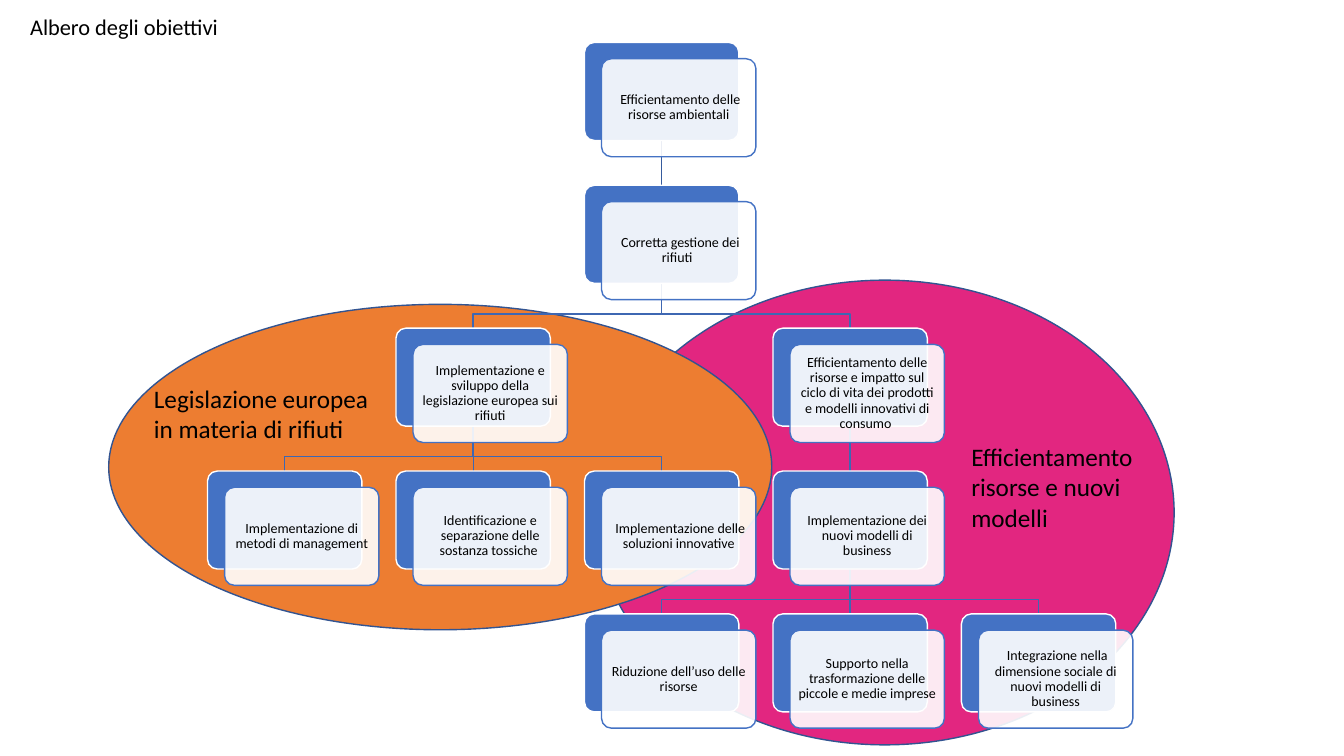
import pptx
import pptx.util
import pptx.dml.color
import pptx.enum.shapes
import pptx.enum.text
import pptx.oxml.ns
import lxml.etree
from dataclasses import dataclass

Cm, Pt = pptx.util.Cm, pptx.util.Pt
qn = pptx.oxml.ns.qn
SHAPE = pptx.enum.shapes.MSO_SHAPE
ALIGN = pptx.enum.text.PP_ALIGN
ANCHOR = pptx.enum.text.MSO_ANCHOR

# Content: key -> (column, row, parent, text)
GOALS = {
    "resources": (2, 0, None, " Efficientamento delle risorse ambientali"),
    "waste": (2, 1, "resources", " Corretta gestione dei rifiuti "),
    "law": (1, 2, "waste",
            "Implementazione e sviluppo della legislazione europea sui rifiuti"),
    "management": (0, 3, "law", "Implementazione di metodi di management"),
    "toxic": (1, 3, "law", "Identificazione e separazione delle sostanza tossiche "),
    "solutions": (2, 3, "law", " Implementazione delle soluzioni innovative"),
    "lifecycle": (3, 2, "waste",
                  "Efficientamento delle risorse e impatto sul ciclo di vita "
                  "dei prodotti e modelli innovativi di consumo "),
    "business": (3, 3, "lifecycle", "Implementazione dei nuovi modelli di business"),
    "reduction": (2, 4, "business", "Riduzione dell’uso delle risorse"),
    "support": (3, 4, "business",
                "Supporto nella trasformazione delle piccole e medie imprese"),
    "social": (4, 4, "business",
               " Integrazione nella dimensione sociale di nuovi modelli di business"),
}
# Areas and labels: left, top, width, height in cm
AREAS = [
    ("magenta", (15.01, 7.06, 14.58, 11.71)),
    ("orange", (2.74, 7.67, 16.71, 8.2)),
]
LABELS = [
    ("Efficientamento risorse e nuovi modelli", "label", (24.23, 11, 5.69, 2.57)),
    ("Legislazione europea in materia di rifiuti", "label", (3.63, 9.53, 5.99, 1.8)),
    ("Albero degli obiettivi", "title", (0.51, 0.2, 6.1, 0.94)),
]

# Grid of the tree, in cm
LEFT, TOP, COL_STEP, ROW_STEP = 5.23, 1.07, 4.75, 3.6
BOX_W, BOX_H = 3.89, 2.47
CARD_DX, CARD_DY = 0.43, 0.41
BEND = 0.36


@dataclass(frozen=True)
class Theme:
    font: str = "Calibri"
    text: str = "000000"
    white: str = "FFFFFF"
    blue: str = "4472C4"
    magenta: str = "E22680"
    orange: str = "ED7D31"
    outline: str = "325491"
    root_link: str = "365B9D"
    link: str = "3E67B2"
    goal: int = 10
    label: int = 18
    title: int = 16


THEME = Theme()


def rgb(color):
    return pptx.dml.color.RGBColor.from_string(color)


def write(tf, text, size, align=ALIGN.LEFT, anchor=ANCHOR.TOP, spacing=None, inset=None):
    tf.word_wrap = True
    tf.vertical_anchor = anchor
    if inset is not None:
        tf.margin_left = tf.margin_right = tf.margin_top = tf.margin_bottom = Cm(inset)
    p = tf.paragraphs[0]
    p.alignment = align
    p.line_spacing = spacing
    r = p.add_run()
    r.text = text
    r.font.name, r.font.size = THEME.font, Pt(size)
    r.font.color.rgb = rgb(THEME.text)


def add_filled(shapes, kind, box, fill, line, opacity=None):
    s = shapes.add_shape(kind, *map(Cm, box))
    s.shadow.inherit = False
    s.fill.solid()
    s.fill.fore_color.rgb = rgb(fill)
    if opacity is not None:
        color = s._element.spPr.find(".//" + qn("a:srgbClr"))
        lxml.etree.SubElement(color, qn("a:alpha"), val=str(opacity * 1000))
    s.line.color.rgb = rgb(line)
    s.line.width = Pt(1)
    if kind == SHAPE.ROUNDED_RECTANGLE:
        s.adjustments[0] = 0.1
    return s


def place(key):
    col, row = GOALS[key][:2]
    return LEFT + col * COL_STEP, TOP + row * ROW_STEP


def add_link(shapes, parent, child):
    """Draw a straight connector, or a bent line when the columns differ."""
    (px, py), (cx, cy) = place(parent), place(child)
    x1, y1, x2, y2 = (Cm(v) for v in (px + BOX_W / 2, py + BOX_H, cx + BOX_W / 2, cy))
    straight = x1 == x2
    if straight:
        s = shapes.add_connector(pptx.enum.shapes.MSO_CONNECTOR.STRAIGHT, x1, y1, x2, y2)
        lxml.etree.SubElement(s._element.spPr, qn("a:effectLst"))
    else:
        bend = y2 - Cm(BEND)
        fb = shapes.build_freeform(x1, y1)
        fb.add_line_segments([(x1, bend), (x2, bend), (x2, y2)], close=False)
        s = fb.convert_to_shape()
        s.shadow.inherit = False
        s.fill.background()
    s.line.color.rgb = rgb(THEME.root_link if GOALS[parent][2] is None else THEME.link)
    s.line.width = Pt(1)
    return s if straight else None


def main():
    prs = pptx.Presentation()
    prs.slide_width, prs.slide_height = Cm(33.87), Cm(19.05)
    shapes = prs.slides.add_slide(prs.slide_layouts[6]).shapes

    # Coloured areas
    for color, box in AREAS:
        add_filled(shapes, SHAPE.OVAL, box, getattr(THEME, color), THEME.outline)

    # Links, behind the boxes
    links = []
    for key, (_, _, parent, _) in GOALS.items():
        if parent:
            links.append((parent, key, add_link(shapes, parent, key)))

    # Goals: a blue box with a translucent card in front
    boxes = {}
    for key, (_, _, _, text) in GOALS.items():
        x, y = place(key)
        boxes[key] = add_filled(shapes, SHAPE.ROUNDED_RECTANGLE, (x, y, BOX_W, BOX_H),
                                THEME.blue, THEME.white)
        card = add_filled(shapes, SHAPE.ROUNDED_RECTANGLE,
                          (x + CARD_DX, y + CARD_DY, BOX_W, BOX_H),
                          THEME.white, THEME.blue, opacity=90)
        write(card.text_frame, text, THEME.goal, align=ALIGN.CENTER,
              anchor=ANCHOR.MIDDLE, spacing=0.9, inset=0.1)

    # Join the straight links to their boxes
    for parent, child, connector in links:
        if connector is not None:
            connector.begin_connect(boxes[parent], 2)
            connector.end_connect(boxes[child], 0)

    # Labels and title
    for text, size, box in LABELS:
        write(shapes.add_textbox(*map(Cm, box)).text_frame, text, getattr(THEME, size))

    prs.save("out.pptx")


if __name__ == "__main__":
    main()
